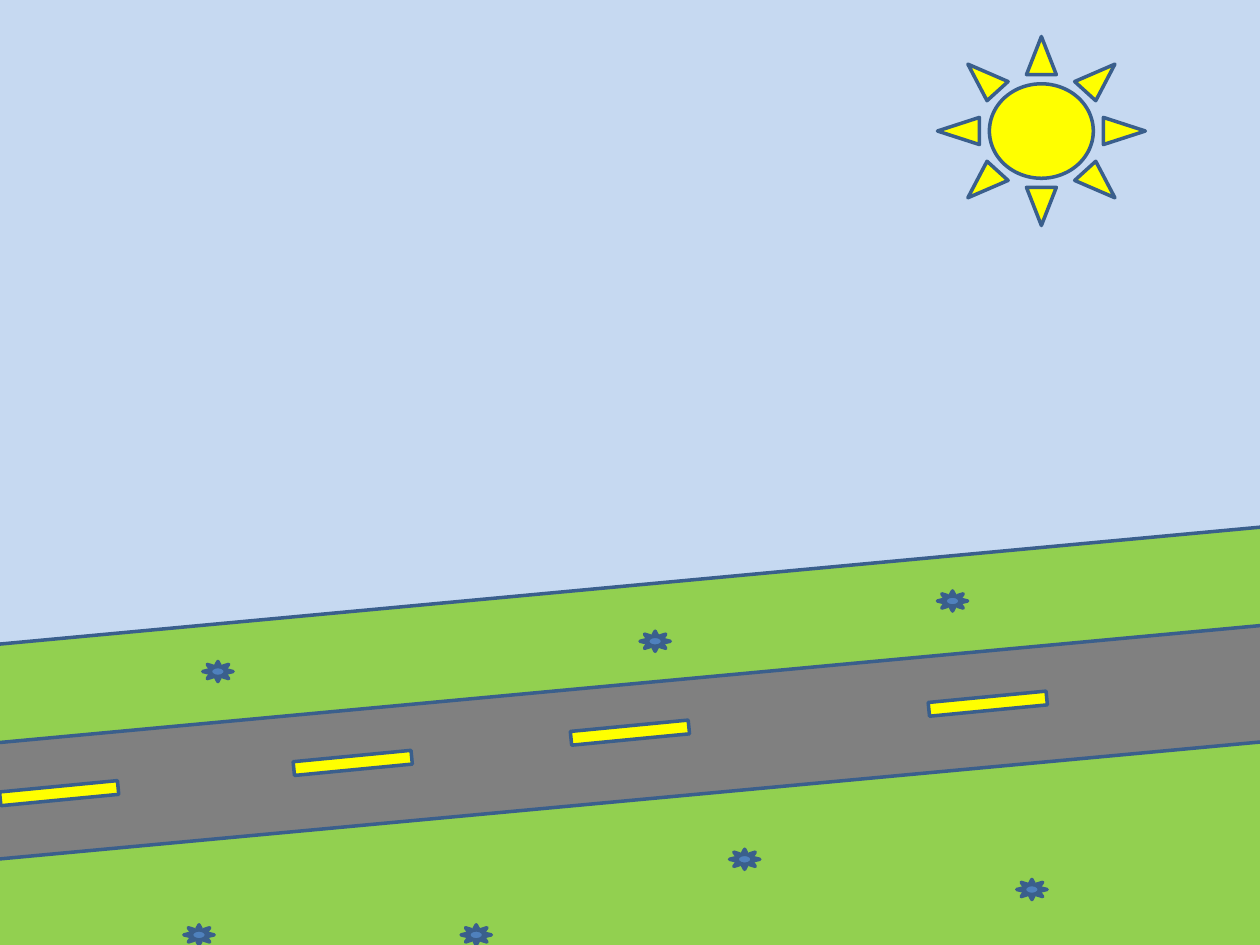
from pptx import Presentation
from pptx.dml.color import RGBColor
from pptx.enum.shapes import MSO_SHAPE
from pptx.util import Inches, Pt

RECT = MSO_SHAPE.RECTANGLE
BAND = MSO_SHAPE.FLOWCHART_PROCESS
SLOPE = MSO_SHAPE.FLOWCHART_MANUAL_INPUT
SUN = MSO_SHAPE.SUN

SKY, GRASS, ROAD = "C6D9F1", "92D050", "808080"
YELLOW, FLOWER, OUTLINE = "FFFF00", "4F81BD", "3A5F8C"


def paint(fill, color):
    fill.solid()
    fill.fore_color.rgb = RGBColor.from_string(color)


def add(kind, x, y, w, h, color, rotation=0):
    sp = s.shapes.add_shape(kind, Inches(x), Inches(y), Inches(w), Inches(h))
    sp.rotation = rotation
    sp.shadow.inherit = False
    paint(sp.fill, color)
    paint(sp.line.fill, OUTLINE)
    sp.line.width = Pt(2)


prs = Presentation()
prs.slide_width = Inches(10)
prs.slide_height = Inches(7.5)
s = prs.slides.add_slide(prs.slide_layouts[6])
paint(s.background.fill, SKY)

add(BAND, -0.66, 4.66, 11.1, 0.79, GRASS, 354.7)
add(SLOPE, -0.22, 6.07, 10.37, 1.91, GRASS, 357.2)
add(SUN, 7.44, 0.29, 1.65, 1.5, YELLOW)
add(BAND, -0.65, 5.44, 11.1, 0.92, ROAD, 354.7)

for x, y in [(0, 6.24), (7.37, 5.53), (4.53, 5.76), (2.33, 6)]:
    add(RECT, x, y, 0.94, 0.11, YELLOW, 354.5)

flowers = [(5.08, 5.01), (7.44, 4.69), (5.79, 6.74), (8.07, 6.98),
           (3.66, 7.34), (1.46, 7.34), (1.61, 5.25)]
for x, y in flowers:
    add(SUN, x, y, 0.24, 0.16, FLOWER)

prs.save("out.pptx")
